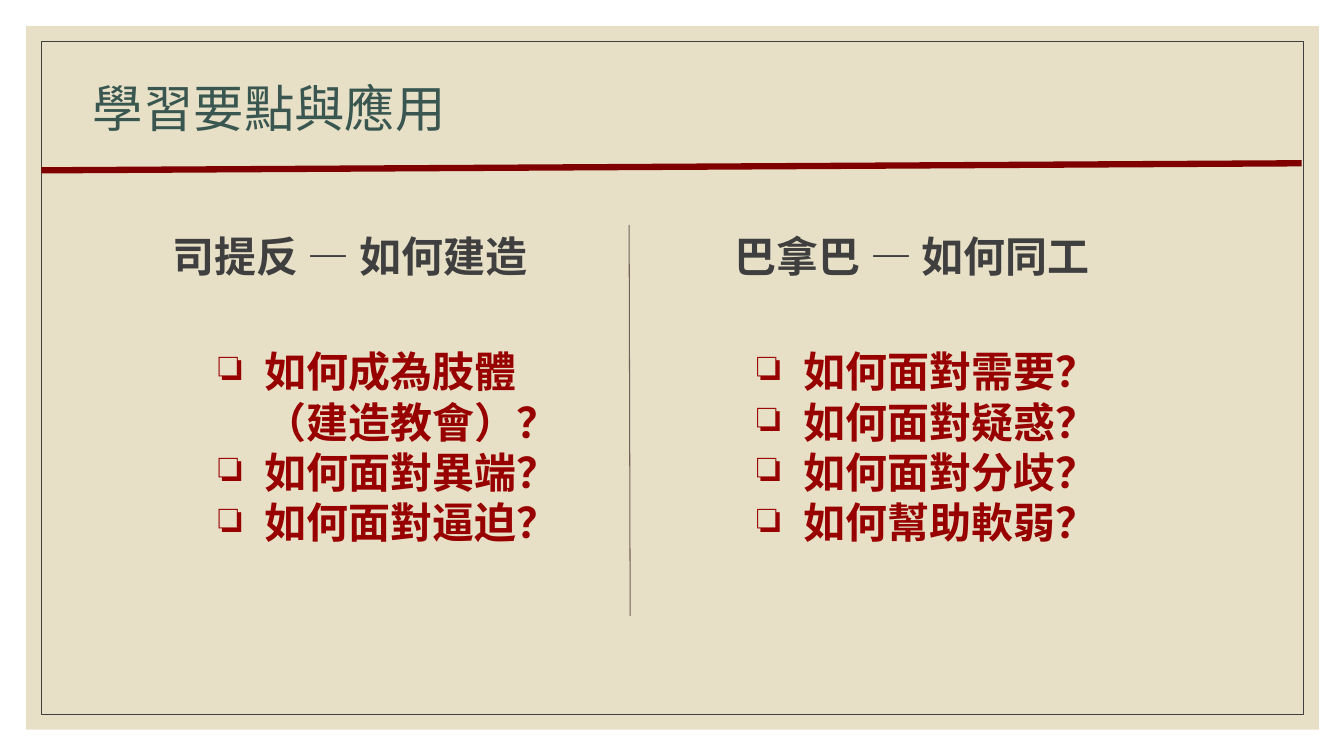
from lxml import etree
from pptx import Presentation
from pptx.dml.color import RGBColor
from pptx.enum.shapes import MSO_CONNECTOR, MSO_SHAPE
from pptx.enum.text import MSO_ANCHOR, MSO_AUTO_SIZE, PP_ALIGN
from pptx.oxml.ns import qn
from pptx.util import Emu, Pt

PX = 9144  # 100 px to the inch
RECT = MSO_SHAPE.RECTANGLE
LINE = MSO_CONNECTOR.STRAIGHT
LEFT = PP_ALIGN.LEFT
TOP, MIDDLE = MSO_ANCHOR.TOP, MSO_ANCHOR.MIDDLE
FIXED = MSO_AUTO_SIZE.NONE

COLORS = {"sand": "E7E0C7", "dark": "3F3F3F", "rule": "800000",
          "teal": "395750", "red": "980000", "brown": "736059"}
TITLE = {"size": Pt(36), "name": "Arial", "bold": False}
BODY = {"size": Pt(30), "name": "Times New Roman", "bold": True}

# head box, list box, heading, questions
TOPICS = [
    ((161, 219, 391, 71), (203, 333, 377, 222), "司提反 — 如何建造",
     ["如何成為肢體（建造教會）？", "如何面對異端？", "如何面對逼迫？"]),
    ((719, 219, 381, 71), (737, 333, 377, 222), "巴拿巴 — 如何同工",
     ["如何面對需要？", "如何面對疑惑？", "如何面對分歧？", "如何幫助軟弱？"]),
]


def px(*nums):
    return [Emu(n * PX) for n in nums]


def rgb(name):
    return RGBColor.from_string(COLORS[name])


def style(obj, values):
    for key, value in values.items():
        setattr(obj, key, value)


def write(shape, lines, font, color, pad=10, anchor=TOP):
    """Fill a text shape, one paragraph a line; pad is the top and bottom inset."""
    frame = shape.text_frame
    side, edge = px(10, pad)
    style(frame, {"word_wrap": True, "auto_size": FIXED,
                  "vertical_anchor": anchor,
                  "margin_left": side, "margin_right": side,
                  "margin_top": edge, "margin_bottom": edge})
    frame.text = "\n".join(lines)
    for para in frame.paragraphs:
        para.alignment = LEFT
        for run in para.runs:
            style(run.font, font)
            run.font.color.rgb = rgb(color)
    return frame


def bullet(para, color):
    props = para._p.get_or_add_pPr()
    props.set("marL", str(50 * PX))
    props.set("indent", str(-46 * PX))
    tint = etree.SubElement(props, qn("a:buClr"))
    etree.SubElement(tint, qn("a:srgbClr"), val=COLORS[color])
    etree.SubElement(props, qn("a:buChar"), char="❏")


def rule(slide, ends, color, width):
    line = slide.shapes.add_connector(LINE, *px(*ends))
    line.line.color.rgb = rgb(color)
    line.line.width = Pt(width)
    etree.SubElement(line._element.spPr, qn("a:effectLst"))


def panel(slide, box, inset):
    """Sand panel with a thin frame set in from its edge."""
    x, y, w, h = box
    back = slide.shapes.add_shape(RECT, *px(*box))
    back.fill.solid()
    back.fill.fore_color.rgb = rgb("sand")
    back.line.fill.background()
    edge = slide.shapes.add_shape(
        RECT, *px(x + inset, y + inset, w - 2 * inset, h - 2 * inset))
    edge.fill.background()
    edge.line.color.rgb = rgb("dark")
    edge.line.width = Pt(0.75)
    for shape in (back, edge):
        shape.shadow.inherit = False


def header(slide, box):
    title = slide.shapes.title
    style(title, dict(zip(("left", "top", "width", "height"), px(*box))))
    frame = write(title, ["學習要點與應用"], TITLE, "teal", 5, MIDDLE)
    frame.paragraphs[0].line_spacing = 0.9
    # Bring the title in front of the panel
    slide.shapes._spTree.append(title._element)


def topic(slide, head, area, name, items):
    write(slide.shapes.add_textbox(*px(*head)), [name], BODY, "dark")
    frame = write(slide.shapes.add_textbox(*px(*area)), items, BODY, "red")
    for para in frame.paragraphs:
        bullet(para, "red")


def main():
    deck = Presentation()
    deck.slide_width, deck.slide_height = px(1333, 750)
    slide = deck.slides.add_slide(deck.slide_layouts.get_by_name("Title Only"))
    panel(slide, (26, 26, 1282, 698), 15)
    rule(slide, (41, 169, 1291, 162), "rule", 4.5)
    header(slide, (82, 55, 404, 110))
    for parts in TOPICS:
        topic(slide, *parts)
    rule(slide, (624, 223, 625, 611), "brown", 0.75)
    deck.save("out.pptx")


if __name__ == "__main__":
    main()
